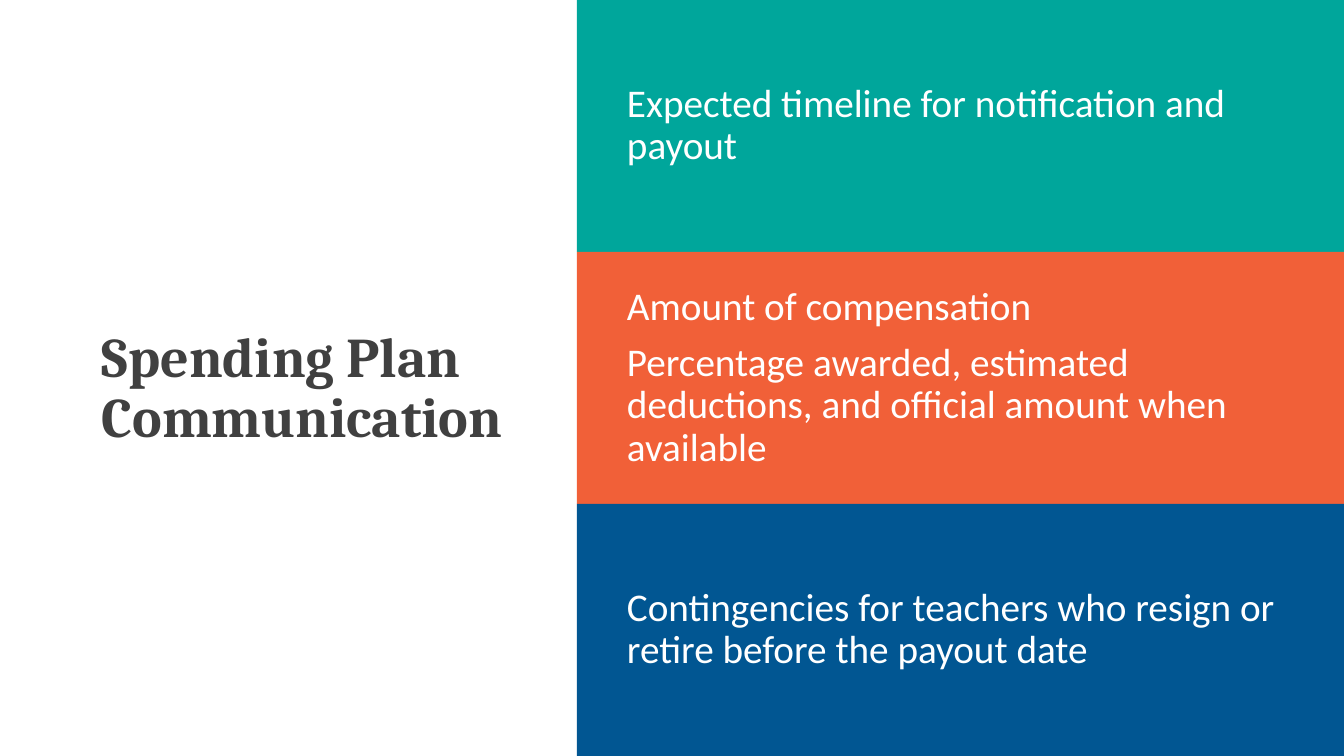
from pptx import Presentation
from pptx.dml.color import RGBColor
from pptx.enum.shapes import MSO_SHAPE
from pptx.enum.text import MSO_ANCHOR, PP_ALIGN
from pptx.util import Emu, Pt

SLIDE_WIDTH, SLIDE_HEIGHT = 1344, 756
EMU_PER_PX = 914400 / 100.8
COLORS = {
    "title": "404040",
    "panel_text": "FFFFFF",
    "teal": "00A69B",
    "orange": "F16038",
    "blue": "015692",
}
PANELS = [
    ("teal", ["Expected timeline for notification and payout"]),
    ("orange", [
        "Amount of compensation",
        "Percentage awarded, estimated deductions, and official amount when available",
    ]),
    ("blue", ["Contingencies for teachers who resign or retire before the payout date"]),
]


def px(length):
    return Emu(round(length * EMU_PER_PX))


def color(name):
    return RGBColor.from_string(COLORS[name])


def apply_format(target, values):
    for name, value in values.items():
        setattr(target, name, value)


class SlideBuilder:
    """Holds the text styles and the current slide."""

    title_font = {"name": "Cambria", "size": Pt(40), "bold": True}
    panel_font = {"name": "Calibri", "size": Pt(28), "bold": False}
    paragraph_style = {"alignment": PP_ALIGN.LEFT, "line_spacing": 0.9}

    def __init__(self, presentation):
        self.slide = presentation.slides.add_slide(presentation.slide_layouts[6])

    def fill_text(self, shape, texts, font, font_color, margins):
        frame = shape.text_frame
        side, edge = map(px, margins)
        apply_format(frame, {
            "word_wrap": True,
            "vertical_anchor": MSO_ANCHOR.MIDDLE,
            "margin_left": side,
            "margin_right": side,
            "margin_top": edge,
            "margin_bottom": edge,
        })
        for index, text in enumerate(texts):
            paragraph = frame.add_paragraph() if index else frame.paragraphs[0]
            paragraph.text = text
            apply_format(paragraph, self.paragraph_style)
            paragraph.space_before = Pt(10 if index else 0)
            apply_format(paragraph.font, font)
            paragraph.font.color.rgb = color(font_color)

    def title(self, text, *box):
        shape = self.slide.shapes.add_textbox(*map(px, box))
        self.fill_text(shape, [text], self.title_font, "title", (10, 5))

    def panel(self, texts, fill, *box):
        shape = self.slide.shapes.add_shape(MSO_SHAPE.RECTANGLE, *map(px, box))
        shape.shadow.inherit = False
        shape.fill.solid()
        shape.fill.fore_color.rgb = color(fill)
        shape.line.fill.background()
        self.fill_text(shape, texts, self.panel_font, "panel_text", (50, 5))


def main():
    presentation = Presentation()
    presentation.slide_width = px(SLIDE_WIDTH)
    presentation.slide_height = px(SLIDE_HEIGHT)
    builder = SlideBuilder(presentation)

    # Title on the left
    builder.title("Spending Plan Communication", 92, 104, 442, 571)

    # Equal panels stacked down the right side
    left = 577
    height = SLIDE_HEIGHT // len(PANELS)
    for row, (fill, texts) in enumerate(PANELS):
        builder.panel(texts, fill, left, row * height, SLIDE_WIDTH - left, height)

    presentation.save("out.pptx")


if __name__ == "__main__":
    main()
